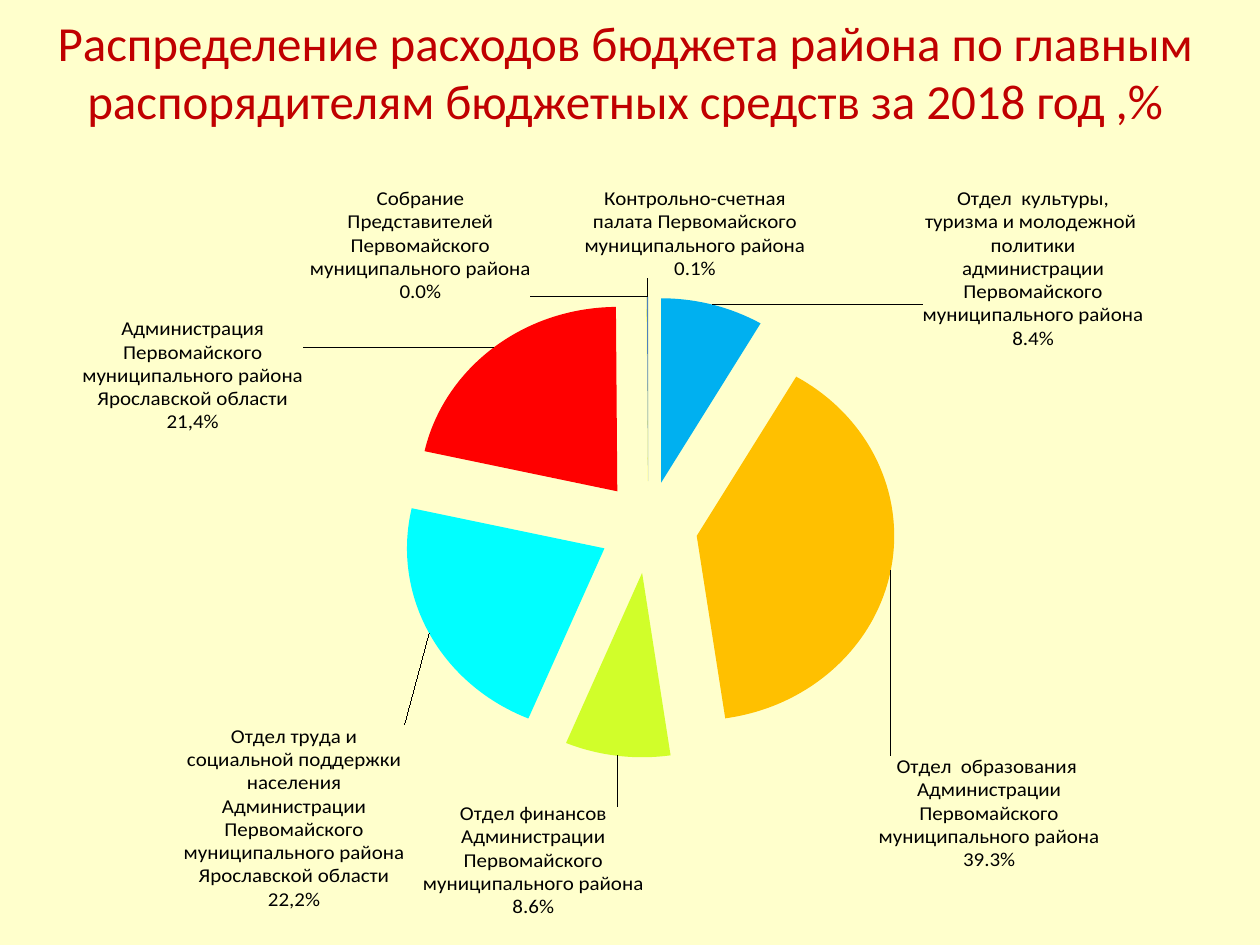
import pptx
import pptx.chart.data
import pptx.dml.color
import pptx.enum.chart
import pptx.enum.text
import pptx.oxml
import pptx.oxml.ns
import pptx.util
from pptx.util import Cm

# Content
TITLE = ("Распределение расходов бюджета района по главным "
         "распорядителям бюджетных средств за 2018 год ,%")
# category, share, colour, label shift in % of chart width and height, written share
DEPARTMENTS = [
    ("Отдел  культуры, туризма и молодежной  политики администрации "
     "Первомайского муниципального района", 0.084, "blue", (18.4, 7), None),
    ("Отдел  образования  Администрации Первомайского муниципального района",
     0.393, "amber", (-1.7, 25), None),
    ("Отдел финансов Администрации Первомайского муниципального района",
     0.086, "lime", (2.4, 6), None),
    ("Отдел труда и социальной поддержки населения Администрации "
     "Первомайского муниципального района Ярославской области",
     0.222, "cyan", (-1.6, 12.1), "22,2%"),
    ("Администрация Первомайского муниципального района Ярославской области",
     0.214, "red", (-16.4, 12.5), "21,4%"),
    # a tiny share, because the label of an exact zero is not drawn
    ("Собрание Представителей Первомайского муниципального района",
     0.0001, "yellow", (-20, 1.5), None),
    ("Контрольно-счетная палата Первомайского муниципального района",
     0.001, "steel", (4.2, -1.5), None),
]
COLORS = {
    "background": "FFFFCC", "title": "C00000", "text": "000000",
    "blue": "00B0F0", "amber": "FFC000", "lime": "D1FE2A", "cyan": "00FFFF",
    "red": "FF0000", "yellow": "FFFF00", "steel": "4F81BD",
}
FONT = "Calibri"
PLOT_AREA = {"x": 0.2, "y": 0.15, "w": 0.65, "h": 0.63}
EXPLOSION = 25


def rgb(name):
    return pptx.dml.color.RGBColor.from_string(COLORS[name])


def format_font(font, size, color="text"):
    font.name = FONT
    font.size = pptx.util.Pt(size)
    font.bold = False
    font.color.rgb = rgb(color)


def write_text(text_frame, text, size=12, color="text"):
    text_frame.word_wrap = True
    text_frame.vertical_anchor = pptx.enum.text.MSO_ANCHOR.MIDDLE
    text_frame.text = text
    for paragraph in text_frame.paragraphs:
        paragraph.alignment = pptx.enum.text.PP_ALIGN.CENTER
        for run in paragraph.runs:
            format_font(run.font, size, color)


def chart_element(tag, content="", attributes=""):
    namespace = pptx.oxml.ns.nsdecls("c")
    return pptx.oxml.parse_xml(f"<c:{tag} {namespace} {attributes}>{content}</c:{tag}>")


def manual_layout(positions, inner=False):
    content = ""
    if inner:
        content = '<c:layoutTarget val="inner"/><c:xMode val="edge"/><c:yMode val="edge"/>'
    content += "".join(f'<c:{key} val="{value:.3f}"/>' for key, value in positions.items())
    return chart_element("layout", f"<c:manualLayout>{content}</c:manualLayout>")


presentation = pptx.Presentation()
presentation.slide_width, presentation.slide_height = Cm(25.4), Cm(19.05)
slide = presentation.slides.add_slide(presentation.slide_layouts[5])
slide.background.fill.solid()
slide.background.fill.fore_color.rgb = rgb("background")

# Title
title = slide.shapes.title
title.left, title.top, title.width, title.height = Cm(0.5), Cm(0.33), Cm(24.2), Cm(2.2)
write_text(title.text_frame, TITLE, size=28, color="title")

# Exploded pie
chart_data = pptx.chart.data.CategoryChartData(number_format="0.0%")
chart_data.categories = [department[0] for department in DEPARTMENTS]
chart_data.add_series("Series 1", [department[1] for department in DEPARTMENTS])
chart = slide.shapes.add_chart(
    pptx.enum.chart.XL_CHART_TYPE.PIE, Cm(1.1), Cm(2.72), Cm(22.8), Cm(15.8), chart_data).chart
chart.has_legend = False
chart.has_title = False
format_font(chart.font, 10)
plot = chart.plots[0]
plot.vary_by_categories = True
series = plot.series[0]

plot_area = plot._element.getparent()
for layout in plot_area.findall(pptx.oxml.ns.qn("c:layout")):
    plot_area.remove(layout)
plot_area.insert(0, manual_layout(PLOT_AREA, inner=True))

# Shared label settings
labels = series.data_labels
labels.show_value = True
labels.show_category_name = True
labels.show_percentage = False
labels.number_format = "0.0%"
labels.number_format_is_linked = False
labels.position = pptx.enum.chart.XL_LABEL_POSITION.OUTSIDE_END
format_font(labels.font, 12)

# Slices and their labels
for index, (category, share, color, shift, written_share) in enumerate(DEPARTMENTS):
    point = series.points[index]
    point.format.fill.solid()
    point.format.fill.fore_color.rgb = rgb(color)
    point.format.line.fill.background()

    label = point.data_label
    if written_share:
        write_text(label.text_frame, f"{category}\n{written_share}")
    else:
        format_font(label.font, 12)
    label.position = pptx.enum.chart.XL_LABEL_POSITION.OUTSIDE_END
    element = labels._element.xpath(f'c:dLbl[c:idx/@val="{index}"]')[0]
    element.insert(1, manual_layout({"x": shift[0] / 100, "y": shift[1] / 100}))
    if not written_share:
        element.insert(2, chart_element("numFmt", attributes='formatCode="0.0%" sourceLinked="0"'))
    element.xpath("c:showCatName")[0].set("val", "1")
    element.append(chart_element("separator", "\n"))

# Pull the slices apart
data_points = series._element.xpath("c:dPt")
for following in [data_points[0]] + [point.xpath("c:spPr")[0] for point in data_points]:
    following.addprevious(chart_element("explosion", attributes=f'val="{EXPLOSION}"'))

presentation.save("out.pptx")
